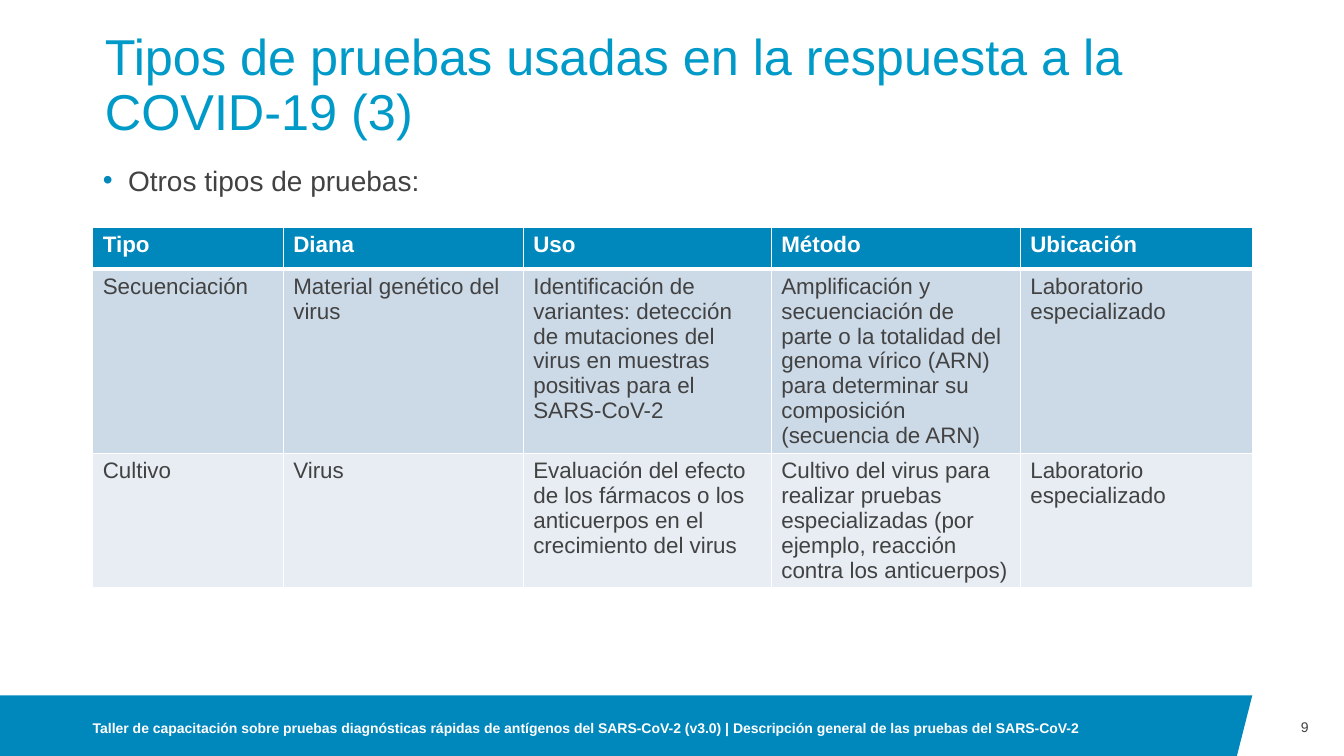
from lxml import etree
from pptx import Presentation
from pptx.dml.color import RGBColor
from pptx.enum.text import MSO_ANCHOR, MSO_AUTO_SIZE, PP_ALIGN
from pptx.oxml.ns import qn
from pptx.util import Inches, Pt

TOP, MIDDLE, BOTTOM = MSO_ANCHOR.TOP, MSO_ANCHOR.MIDDLE, MSO_ANCHOR.BOTTOM
LEFT, RIGHT = PP_ALIGN.LEFT, PP_ALIGN.RIGHT
NO_FIT = MSO_AUTO_SIZE.NONE

COLORS = {
    "title": "009AC9",
    "blue": "0087BC",
    "text": "424242",
    "white": "FFFFFF",
    "band_dark": "CCD9E7",
    "band_light": "E7EDF3",
}
COLUMN_WIDTHS = [1.89, 2.38, 2.46, 2.47, 2.3]
ROW_HEIGHTS = [0.41, 1.83, 1.33]
ROW_FILLS = ["blue", "band_dark", "band_light"]
TEST_TYPES = [
    ["Tipo", "Diana", "Uso", "Método", "Ubicación"],
    [
        "Secuenciación",
        "Material genético del virus",
        "Identificación de variantes: detección de mutaciones del virus en muestras positivas para el SARS-CoV-2",
        "Amplificación y secuenciación de parte o la totalidad del genoma vírico (ARN) para determinar su composición (secuencia de ARN)",
        "Laboratorio especializado",
    ],
    [
        "Cultivo",
        "Virus",
        "Evaluación del efecto de los fármacos o los anticuerpos en el crecimiento del virus",
        "Cultivo del virus para realizar pruebas especializadas (por ejemplo, reacción contra los anticuerpos)",
        "Laboratorio especializado",
    ],
]


def set_values(target, values):
    for name, value in values.items():
        setattr(target, name, value)


def write_text(frame, text, size, color, bold=False, **paragraph_values):
    para = frame.paragraphs[0]
    set_values(para, {"alignment": LEFT, "space_before": Pt(0), **paragraph_values})
    span = para.add_run()
    span.text = text
    set_values(span.font, {"name": "Arial", "size": Pt(size), "bold": bold})
    span.font.color.rgb = RGBColor.from_string(COLORS[color])
    return para


def place_box(box, area, anchor, insets=(0, 0)):
    for name, value in zip(("left", "top", "width", "height"), area):
        setattr(box, name, Inches(value))
    side, edge = map(Inches, insets)
    set_values(box.text_frame, {
        "word_wrap": True, "auto_size": NO_FIT, "vertical_anchor": anchor,
        "margin_left": side, "margin_right": side,
        "margin_top": edge, "margin_bottom": edge,
    })
    return box.text_frame


def add_label(page, area, *text_values, **paragraph_values):
    box = page.shapes.add_textbox(0, 0, 0, 0)
    write_text(place_box(box, area, MIDDLE), *text_values, **paragraph_values)


def add_footer_band(page):
    builder = page.shapes.build_freeform(0, Inches(6.9))
    corners = [(12.42, 6.9), (12.26, 7.53), (0, 7.53)]
    builder.add_line_segments([(Inches(x), Inches(y)) for x, y in corners])
    band = builder.convert_to_shape()
    band.shadow.inherit = False
    band.fill.solid()
    band.fill.fore_color.rgb = RGBColor.from_string(COLORS["blue"])
    band.line.fill.background()


def add_bullet(para, symbol, color):
    properties = para._p.get_or_add_pPr()
    properties.set("marL", str(Inches(0.25)))
    properties.set("indent", str(-Inches(0.25)))
    bullet_color = etree.SubElement(properties, qn("a:buClr"))
    etree.SubElement(bullet_color, qn("a:srgbClr"), val=COLORS[color])
    etree.SubElement(properties, qn("a:buFont"), typeface="Arial")
    etree.SubElement(properties, qn("a:buChar"), char=symbol)


def set_borders(cell, bottom_width):
    properties = cell._tc.get_or_add_tcPr()
    widths = {"a:lnL": 1, "a:lnR": 1, "a:lnT": 1, "a:lnB": bottom_width}
    for position, (tag, width) in enumerate(widths.items()):
        border = etree.Element(qn(tag), w=str(Pt(width)))
        fill = etree.SubElement(border, qn("a:solidFill"))
        etree.SubElement(fill, qn("a:srgbClr"), val=COLORS["white"])
        properties.insert(position, border)


def add_test_table(page):
    frame = page.shapes.add_table(
        len(ROW_HEIGHTS), len(COLUMN_WIDTHS), Inches(0.92), Inches(2.26),
        Inches(sum(COLUMN_WIDTHS)), Inches(sum(ROW_HEIGHTS)))
    table = frame.table
    for column, width in zip(table.columns, COLUMN_WIDTHS):
        column.width = Inches(width)
    for index, (row, height) in enumerate(zip(table.rows, ROW_HEIGHTS)):
        row.height = Inches(height)
        header = index == 0
        for cell, text in zip(row.cells, TEST_TYPES[index]):
            cell.vertical_anchor = TOP
            cell.fill.solid()
            cell.fill.fore_color.rgb = RGBColor.from_string(COLORS[ROW_FILLS[index]])
            write_text(cell.text_frame, text, 16, "white" if header else "text", header)
            set_borders(cell, 3 if header or index == 0 else 1)


def main():
    deck = Presentation()
    set_values(deck, {"slide_width": Inches(13.33), "slide_height": Inches(7.5)})
    page = deck.slides.add_slide(deck.slide_layouts[1])
    add_footer_band(page)

    title = place_box(page.shapes.title, (1.04, 0.37, 11.5, 1.03), BOTTOM)
    write_text(title, "Tipos de pruebas usadas en la respuesta a la COVID-19 (3)",
               36, "title", line_spacing=0.9)

    body = place_box(page.placeholders[1], (0.92, 1.57, 11.5, 4.86), TOP, (0.1, 0.05))
    add_bullet(write_text(body, "Otros tipos de pruebas:", 20, "text"), "•", "blue")

    add_test_table(page)
    add_label(page, (0.92, 6.95, 10.37, 0.55),
              "Taller de capacitación sobre pruebas diagnósticas rápidas de antígenos del "
              "SARS-CoV-2 (v3.0) | Descripción general de las pruebas del SARS-CoV-2",
              10, "white", True)
    add_label(page, (12.42, 6.9, 0.56, 0.63), "9", 10, "text", alignment=RIGHT)
    deck.save("out.pptx")


if __name__ == "__main__":
    main()
